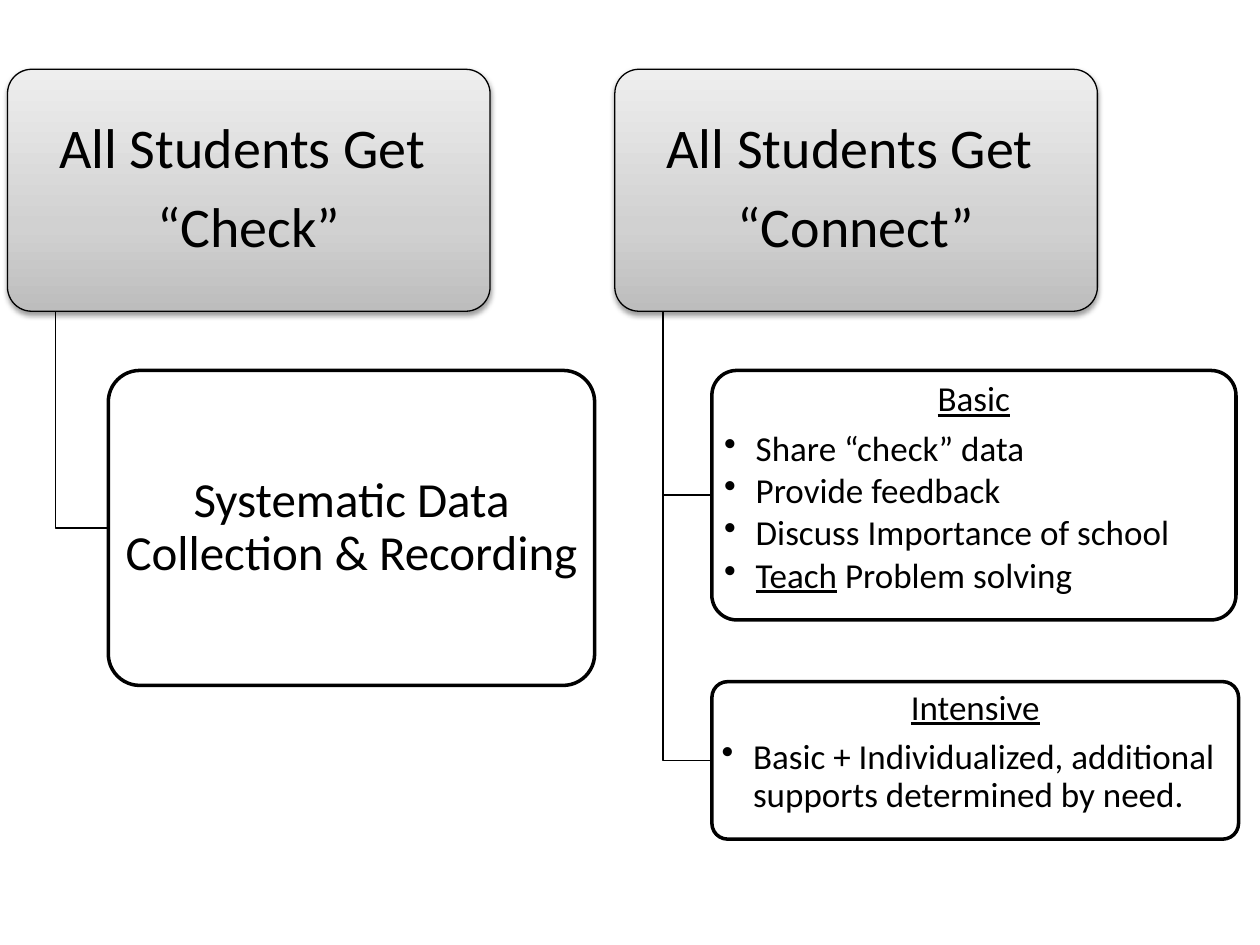
from copy import deepcopy

from pptx import Presentation
from pptx import util as u
from pptx.dml.color import RGBColor
from pptx.enum import shapes, text
from pptx.oxml import parse_xml
from pptx.oxml.ns import nsdecls, qn

COLS, ROWS = 100, 75  # grid over the slide
HEAD_W, HEAD_H, HEAD_TOP = 38.3, 19.2, 5.5
CHILD_TOP = 29.4


def rgb(value):
    return RGBColor.from_string(value)


class Deck:
    font, ink, paper = "Calibri", "000000", "FFFFFF"
    stops = ((0, "BDBDBD"), (0.35, "D1D1D1"), (1, "EEEEEE"))

    def __init__(self):
        self.prs = Presentation()
        self.prs.slide_width, self.prs.slide_height = u.Inches(10), u.Inches(7.5)
        self.s = self.prs.slides.add_slide(self.prs.slide_layouts[6])

    def x(self, col):
        return round(self.prs.slide_width * col / COLS)

    def y(self, row):
        return round(self.prs.slide_height * row / ROWS)

    def box(self, col, row, w, h, line, margins, anchor=text.MSO_ANCHOR.MIDDLE):
        sp = self.s.shapes.add_shape(shapes.MSO_SHAPE.ROUNDED_RECTANGLE,
                                     self.x(col), self.y(row), self.x(w), self.y(h))
        sp.adjustments[0] = 0.1
        sp.fill.solid()
        sp.fill.fore_color.rgb = rgb(self.paper)
        sp.line.color.rgb = rgb(self.ink)
        sp.line.width = u.Pt(line)
        sp.shadow.inherit = False
        tf = sp.text_frame
        tf.word_wrap, tf.vertical_anchor = True, anchor
        tf.margin_left = tf.margin_right = u.Inches(margins[0])
        tf.margin_top = tf.margin_bottom = u.Inches(margins[1])
        return sp

    def shade(self, sp):
        """Give a box the grey gradient and a soft shadow below it."""
        sp.fill.gradient()
        sp.fill.gradient_angle = 90
        gs_list = sp._element.spPr.find(qn("a:gradFill")).find(qn("a:gsLst"))
        gs_list.append(deepcopy(gs_list[0]))
        for stop, (position, color) in zip(sp.fill.gradient_stops, self.stops):
            stop.position, stop.color.rgb = position, rgb(color)
        sp._element.spPr.find(qn("a:effectLst")).append(parse_xml(
            f'<a:outerShdw {nsdecls("a")} blurRad="40000" dist="20000" dir="5400000" '
            f'rotWithShape="0"><a:srgbClr val="{self.ink}"><a:alpha val="38000"/>'
            '</a:srgbClr></a:outerShdw>'))

    def style(self, p, size, gap):
        p.line_spacing, p.space_after = 0.9, u.Pt(size * gap)
        for r in p.runs:
            r.font.name, r.font.size = self.font, u.Pt(size)
            r.font.color.rgb = rgb(self.ink)

    def centred(self, p, line, size, underline=False):
        p.text, p.alignment = line, text.PP_ALIGN.CENTER
        self.style(p, size, 0.33)
        p.runs[0].font.underline = underline

    def bullet(self, p, line, size, underlined=""):
        """Write a bulleted line, led by an optional underlined word."""
        p.text, p.level, p.alignment = underlined or line, 1, text.PP_ALIGN.LEFT
        if underlined:
            p.runs[0].font.underline = True
            p.add_run().text = line
        self.style(p, size, 0.13)
        pPr = p._p.get_or_add_pPr()
        pPr.set("marL", str(u.Inches(0.25)))
        pPr.set("indent", str(-u.Inches(0.25)))
        pPr.append(parse_xml(f'<a:buChar {nsdecls("a")} char="•"/>'))

    def header(self, col, lines):
        sp = self.box(col, HEAD_TOP, HEAD_W, HEAD_H, 0.75, (0.07, 0.04))
        self.shade(sp)
        tf = sp.text_frame
        for i, line in enumerate(lines):
            self.centred(tf.add_paragraph() if i else tf.paragraphs[0], line, 32)
        return sp

    def elbow(self, head, child):
        """Run a line from under the header to the middle of the child's left side."""
        x, y = head.left + head.width // 10, head.top + head.height
        mid = child.top + child.height // 2
        fb = self.s.shapes.build_freeform(x, y)
        fb.add_line_segments([(x, mid), (child.left, mid)], close=False)
        sp = fb.convert_to_shape()
        sp.fill.background()
        sp.line.color.rgb = rgb(self.ink)
        sp.line.width = u.Pt(0.75)
        sp.shadow.inherit = False

    def support(self, head, row, w, h, title, items):
        sp = self.box(56.5, row, w, h, 2, (0.04, 0.03), text.MSO_ANCHOR.TOP)
        tf = sp.text_frame
        self.centred(tf.paragraphs[0], title, 20, underline=True)
        for underlined, line in items:
            self.bullet(tf.add_paragraph(), line, 20, underlined)
        self.elbow(head, sp)


def main():
    d = Deck()
    check = d.header(0.6, ("All Students Get ", "“Check”"))
    data = d.box(8.6, CHILD_TOP, 38.6, 25, 2, (0.06, 0.04))
    d.centred(data.text_frame.paragraphs[0], "Systematic Data Collection & Recording", 28)
    d.elbow(check, data)

    connect = d.header(48.8, ("All Students Get ", "“Connect”"))
    d.support(connect, CHILD_TOP, 41.6, 19.8, "Basic", (
        ("", "Share “check” data"),
        ("", "Provide feedback"),
        ("", "Discuss Importance of school"),
        ("Teach", " Problem solving")))
    d.support(connect, 54.1, 41.8, 12.5, "Intensive", (
        ("", "Basic + Individualized, additional supports determined by need."),))
    d.prs.save("out.pptx")


if __name__ == "__main__":
    main()
